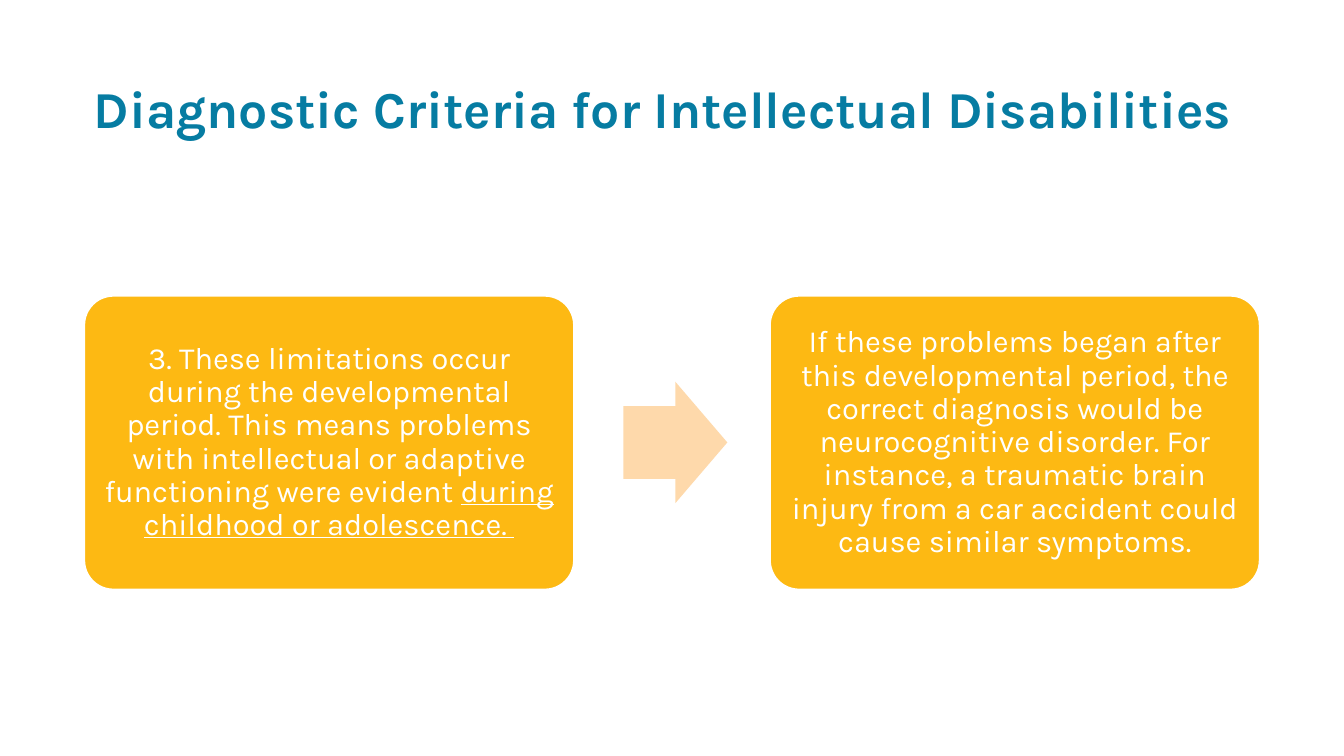
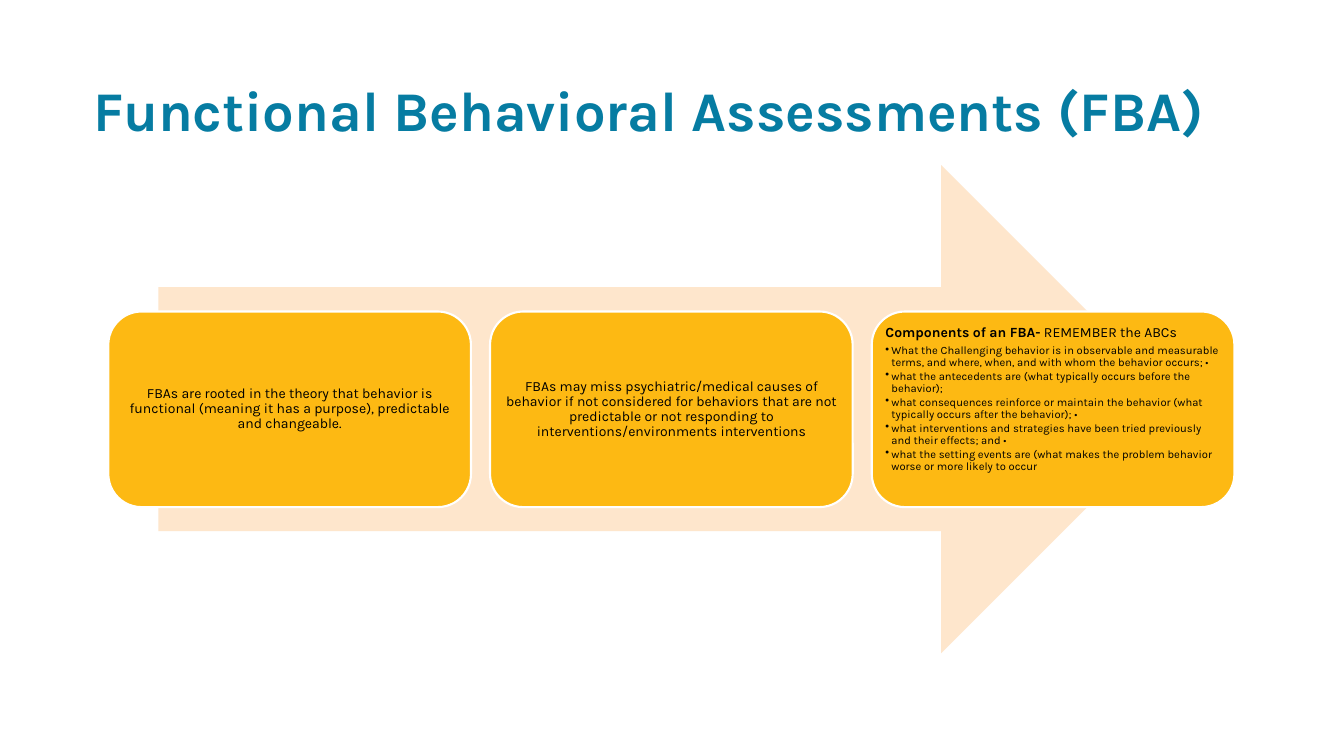
from lxml.etree import SubElement
from pptx import Presentation
from pptx.dml.color import RGBColor
from pptx.enum.shapes import MSO_SHAPE as Preset
from pptx.enum.text import MSO_ANCHOR as Anchor, PP_ALIGN as Align
from pptx.oxml.ns import qn
from pptx.util import Cm, Pt

FONT = "Karla"
TEAL, AMBER, WHITE, BLACK = "067CA2", "FDB913", "FFFFFF", "000000"
PEACH, PALE_PEACH = "FED9AB", "FEE6CC"
TITLE_BOX = (2.11, 1.98, 29.41, 1.8)
BULLET_INDENT = Cm(0.15)

# A paragraph is a list of (text, font changes) runs.
CRITERIA_TITLE = "Diagnostic Criteria for Intellectual Disabilities"
CRITERIA = [
    [("3. These limitations occur during the developmental period. This means "
      "problems with intellectual or adaptive functioning were evident ", {}),
     ("during childhood or adolescence. ", {"underline": True})],
    [("If these problems began after this developmental period, the correct "
      "diagnosis would be neurocognitive disorder. For instance, a traumatic "
      "brain injury from a car accident could cause similar symptoms.", {})],
]

FBA_TITLE = "Functional Behavioral Assessments (FBA)"
FBA_FACTS = [
    [("FBAs are rooted in the theory that behavior is functional (meaning it "
      "has a purpose), predictable and changeable.", {})],
    [("FBAs may miss psychiatric/medical causes of behavior if not considered "
      "for behaviors that are not predictable or not responding to "
      "interventions/environments interventions", {})],
]
COMPONENTS_HEADING = [("Components of an FBA- ", {"bold": True}),
                      ("REMEMBER the ABCs", {})]
COMPONENTS = [
    "What the Challenging behavior is in observable and measurable terms, and "
    "where, when, and with whom the behavior occurs; •",
    "what the antecedents are (what typically occurs before the behavior);",
    "what consequences reinforce or maintain the behavior (what typically "
    "occurs after the behavior); •",
    "what interventions and strategies have been tried previously and their "
    "effects; and •",
    "what the setting events are (what makes the problem behavior worse or "
    "more likely to occur",
]


def rgb(colour):
    return RGBColor.from_string(colour)


def set_all(target, values):
    for name, value in values.items():
        setattr(target, name, value)


def place(box):
    return [Cm(round(length, 2)) for length in box]


def add_runs(paragraph, runs, size, colour):
    for text, changes in runs:
        run = paragraph.add_run()
        run.text = text
        set_all(run.font, {"name": FONT, "size": Pt(size), **changes})
        run.font.color.rgb = rgb(colour)


def add_titled_slide(deck, title, size):
    slide = deck.slides.add_slide(deck.slide_layouts[5])
    heading = slide.shapes.title
    set_all(heading, dict(zip(("left", "top", "width", "height"), place(TITLE_BOX))))
    heading.text_frame.vertical_anchor = Anchor.TOP
    paragraph = heading.text_frame.paragraphs[0]
    set_all(paragraph, {"alignment": Align.LEFT, "line_spacing": 0.9})
    add_runs(paragraph, [(title, {"bold": True})], size, TEAL)
    return slide


def add_filled(slide, preset, box, fill, adjustments=()):
    shape = slide.shapes.add_shape(preset, *place(box))
    shape.shadow.inherit = False
    shape.fill.solid()
    shape.fill.fore_color.rgb = rgb(fill)
    shape.line.fill.background()
    for index, value in enumerate(adjustments):
        shape.adjustments[index] = value
    return shape


def add_card(slide, box, inset, corner):
    """Add an amber rounded card and return its text frame."""
    card = add_filled(slide, Preset.ROUNDED_RECTANGLE, box, AMBER, [corner])
    card.line.color.rgb = rgb(WHITE)
    card.line.width = Pt(1.5)
    frame = card.text_frame
    sides = ("left", "top", "right", "bottom")
    set_all(frame, {f"margin_{side}": Cm(inset) for side in sides})
    set_all(frame, {"word_wrap": True, "vertical_anchor": Anchor.MIDDLE})
    return frame


def write(paragraph, runs, size, colour, align=Align.CENTER, after=0.35):
    """Fill a paragraph; the space after it is a share of the text size."""
    set_all(paragraph, {"alignment": align, "line_spacing": 0.9,
                        "space_after": Pt(round(after * size, 1))})
    add_runs(paragraph, runs, size, colour)


def add_bullet(paragraph):
    properties = paragraph._p.get_or_add_pPr()
    properties.set("marL", str(BULLET_INDENT))
    properties.set("indent", str(-BULLET_INDENT))
    SubElement(properties, qn("a:buChar")).set("char", "•")


def build_criteria(deck):
    slide = add_titled_slide(deck, CRITERIA_TITLE, 37)
    left, middle, width, height, gap = 2.12, 11.15, 12.35, 7.41, 4.93
    arrow_width, arrow_height = 2.62, 3.06
    for index, runs in enumerate(CRITERIA):
        x = left + index * (width + gap)
        frame = add_card(slide, (x, middle - height / 2, width, height), 0.23, 0.1)
        write(frame.paragraphs[0], runs, 22, WHITE)
        if index < len(CRITERIA) - 1:
            arrow = (x + 1.1 * width, middle - arrow_height / 2,
                     arrow_width, arrow_height)
            add_filled(slide, Preset.RIGHT_ARROW, arrow, PEACH, [0.6, 0.5])


def build_fba(deck):
    slide = add_titled_slide(deck, FBA_TITLE, 40)
    left, middle, width, height, gap = 2.73, 10.31, 9.14, 4.93, 0.48
    arrow_height = 12.3
    add_filled(slide, Preset.RIGHT_ARROW,
               (3.99, middle - arrow_height / 2, 25.88, arrow_height), PALE_PEACH)
    frames = [
        add_card(slide, (left + index * (width + gap), middle - height / 2,
                         width, height), 0.1, 0.17)
        for index in range(len(FBA_FACTS) + 1)
    ]
    for frame, runs in zip(frames, FBA_FACTS):
        write(frame.paragraphs[0], runs, 10, BLACK)

    components = frames[-1]
    components.vertical_anchor = Anchor.TOP
    write(components.paragraphs[0], COMPONENTS_HEADING, 10, BLACK, Align.LEFT)
    for text in COMPONENTS:
        paragraph = components.add_paragraph()
        add_bullet(paragraph)
        write(paragraph, [(text, {})], 8, BLACK, Align.LEFT, 0.15)


def main():
    deck = Presentation()
    set_all(deck, {"slide_width": Cm(33.87), "slide_height": Cm(19.05)})
    build_criteria(deck)
    build_fba(deck)
    deck.save("out.pptx")


if __name__ == "__main__":
    main()
